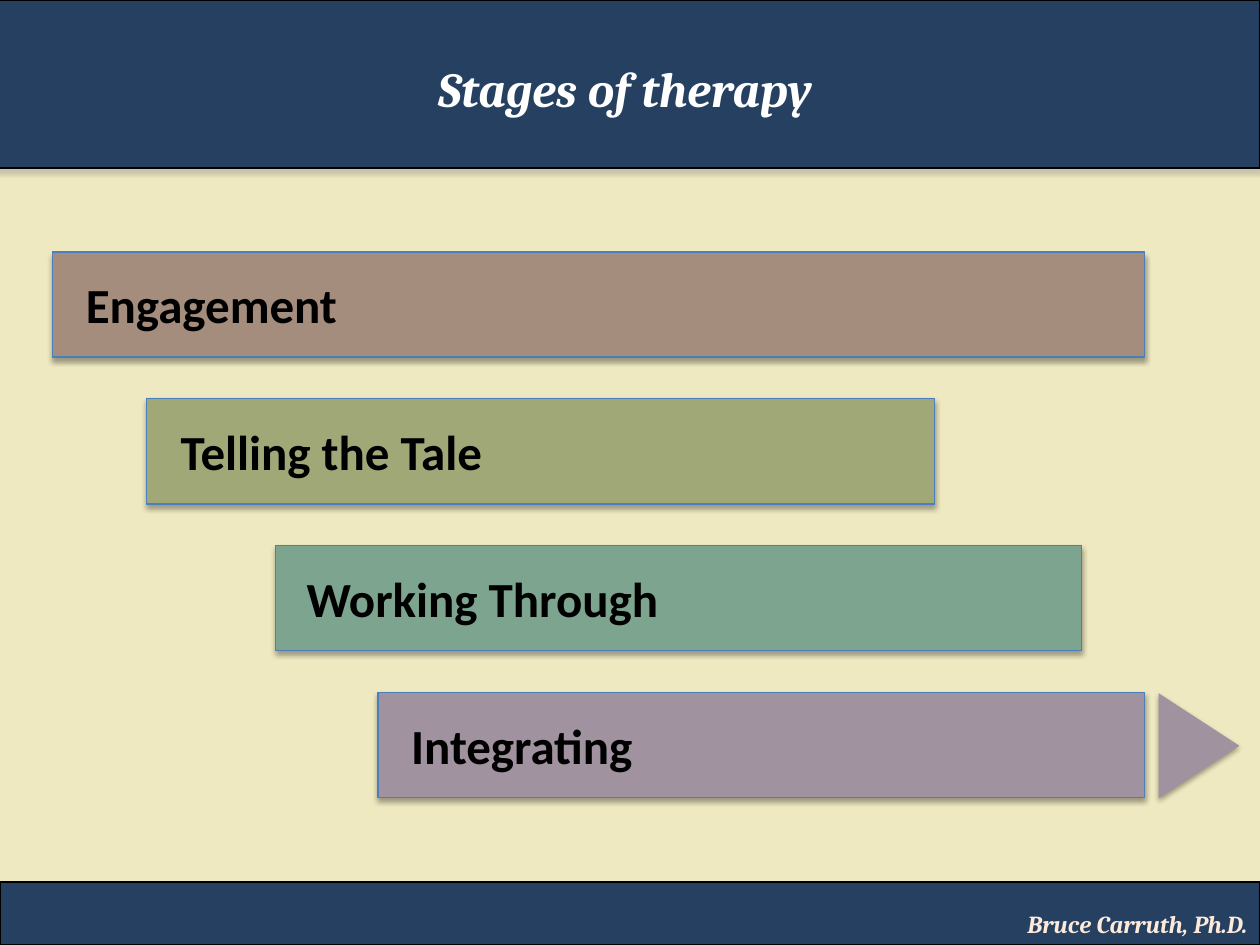
"""Build a slide that shows the stages of therapy as staggered bars."""
import lxml.etree
import pptx
import pptx.dml.color
import pptx.enum.shapes
import pptx.enum.text
import pptx.oxml.ns
import pptx.util

Cm = pptx.util.Cm
SHAPES = pptx.enum.shapes.MSO_SHAPE
ALIGN = pptx.enum.text.PP_ALIGN
ANCHOR = pptx.enum.text.MSO_ANCHOR
FIT = pptx.enum.text.MSO_AUTO_SIZE
color = pptx.dml.color.RGBColor.from_string


def add_block(kind, left, top, width, height, fill, line, shadow):
    block = slide.shapes.add_shape(kind, Cm(left), Cm(top), Cm(width), Cm(height))
    block.fill.solid()
    block.fill.fore_color.rgb = color(fill)
    if line:
        block.line.color.rgb = color(line)
        block.line.width = pptx.util.Pt(0.75)
    else:
        block.line.fill.background()
    block.shadow.inherit = False
    effects = block.element.spPr.find(pptx.oxml.ns.qn("a:effectLst"))
    outer = lxml.etree.SubElement(
        effects, pptx.oxml.ns.qn("a:outerShdw"), blurRad=str(pptx.util.Pt(3.1)),
        dist=str(pptx.util.Pt(1.8)), dir="5400000", rotWithShape="0")
    tint = lxml.etree.SubElement(outer, pptx.oxml.ns.qn("a:srgbClr"), val=shadow)
    lxml.etree.SubElement(tint, pptx.oxml.ns.qn("a:alpha"), val="35000")
    return block


def write(box, text, size, font, fill, align, anchor, italic):
    frame = box.text_frame
    frame.word_wrap = True
    frame.vertical_anchor = anchor
    frame.text = text
    para = frame.paragraphs[0]
    para.alignment = align
    style = para.runs[0].font
    style.name = font
    style.size = pptx.util.Pt(size)
    style.bold = True
    style.italic = italic
    style.color.rgb = color(fill)


deck = pptx.Presentation()
deck.slide_width, deck.slide_height = Cm(25.4), Cm(19.05)
slide = deck.slides.add_slide(deck.slide_layouts.get_by_name("Title Only"))
slide.background.fill.solid()
slide.background.fill.fore_color.rgb = color("EEE9C0")

footer = add_block(SHAPES.RECTANGLE, 0, 17.78, 25.4, 1.27, "254061", "000000", "808080")
write(footer, "Bruce Carruth, Ph.D.", 14, "Cambria", "FDEADA", ALIGN.RIGHT, ANCHOR.BOTTOM, True)

header = add_block(SHAPES.RECTANGLE, -0.08, 0, 25.48, 3.39, "254061", "000000", "808080")
title = slide.shapes.title
header.element.addnext(title.element)
title.left, title.top, title.width, title.height = Cm(1.27), Cm(1.06), Cm(22.65), Cm(1.69)
write(title, "Stages of therapy", 28, "Cambria", "FFFFFF", ALIGN.CENTER, ANCHOR.TOP, True)
title.text_frame.auto_size = FIT.NONE

stages = [
    ("Engagement", 1.06, 22.01, 1.48, 14.17, "A48D7C"),
    ("Telling the Tale", 2.96, 15.88, 3.39, 13.55, "A1A878"),
    ("Working Through", 5.56, 16.25, 5.93, 13.55, "7CA48E"),
    ("Integrating", 7.62, 15.45, 8.04, 13.55, "A0929F"),
]
first_top, step, bar_height = 5.08, 2.96, 2.12
for row, (name, left, width, label_left, label_width, fill) in enumerate(stages):
    top = first_top + row * step
    add_block(SHAPES.RECTANGLE, left, top, width, bar_height, fill, "4B7EBC", "000000")
    label = slide.shapes.add_textbox(Cm(label_left), Cm(top + 0.33), Cm(label_width), Cm(1.45))
    write(label, name, 28, "Calibri", "000000", ALIGN.LEFT, ANCHOR.TOP, False)
    label.text_frame.auto_size = FIT.SHAPE_TO_FIT_TEXT

arrow = add_block(SHAPES.ISOSCELES_TRIANGLE, 23.11, 14.22, bar_height, 1.63, "A0929F", None, "000000")
arrow.rotation = 90

deck.save("out.pptx")
